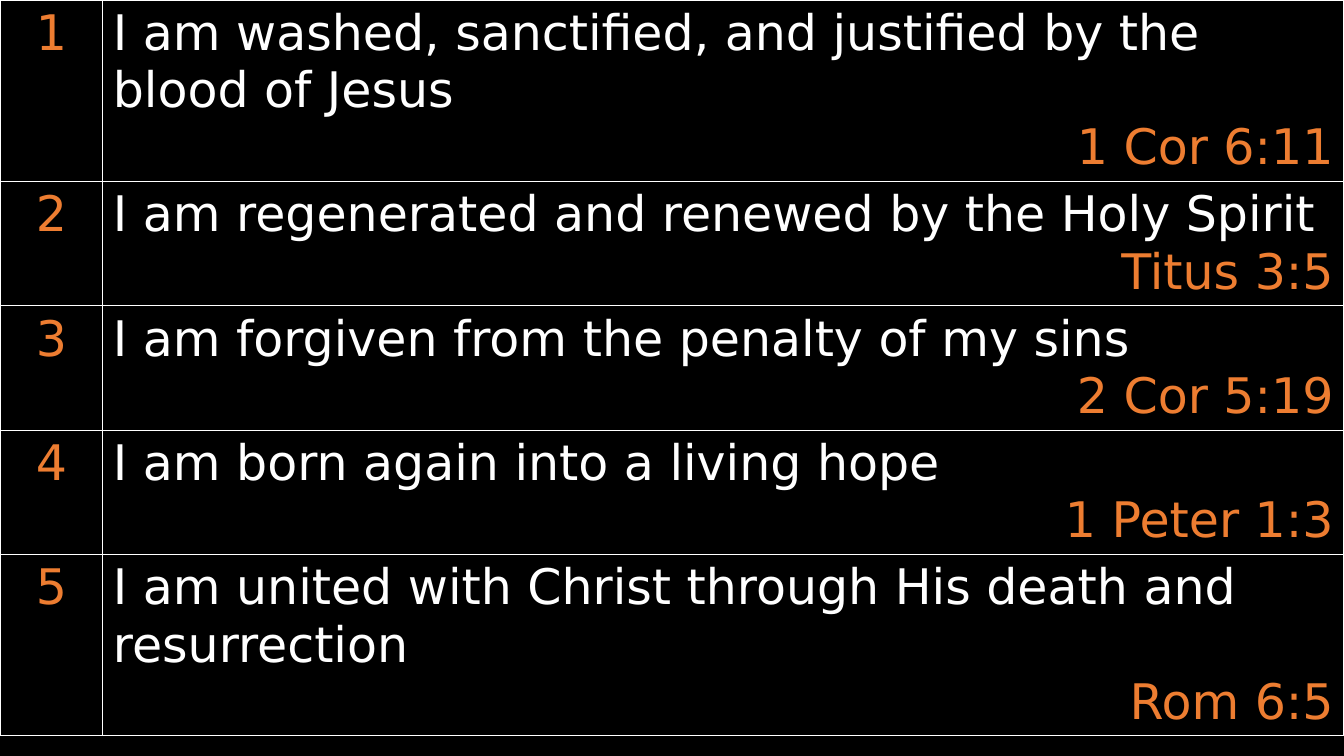
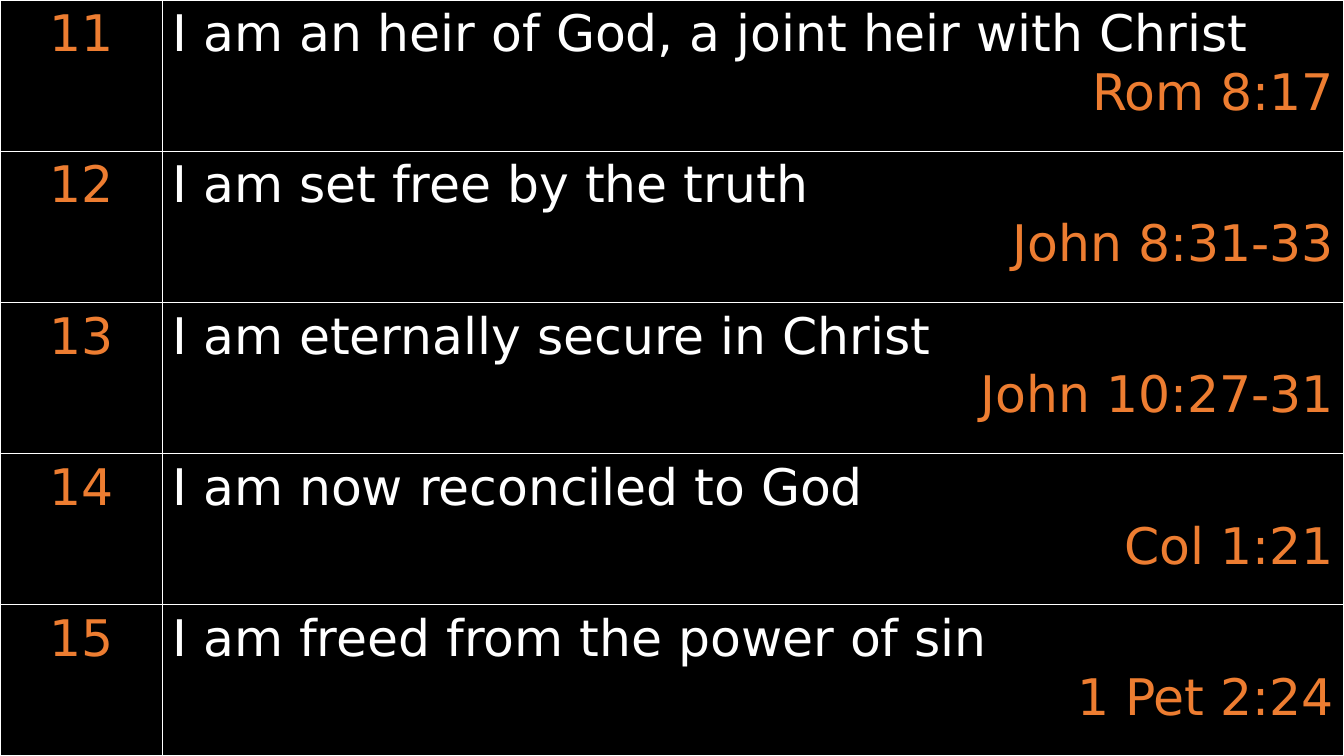
import pptx
import pptx.dml.color
import pptx.enum.text
import pptx.oxml
import pptx.oxml.ns
import pptx.util

ALIGN = pptx.enum.text.PP_ALIGN


def color(value):
    return pptx.dml.color.RGBColor.from_string(value)


class Deck:
    FONT = "DejaVu Sans"
    BACK = "000000"
    TEXT = "FFFFFF"
    ACCENT = "ED7D31"
    BORDER = "FFFFFF"

    def __init__(self):
        self.prs = pptx.Presentation()
        self.prs.slide_width = pptx.util.Inches(13.33)
        self.prs.slide_height = pptx.util.Inches(7.5)
        self.s = None

    def width(self, percent):
        return round(self.prs.slide_width * percent / 100)

    def height(self, percent):
        return round(self.prs.slide_height * percent / 100)

    def slide(self):
        self.s = self.prs.slides.add_slide(self.prs.slide_layouts[6])
        fill = self.s.background.fill
        fill.solid()
        fill.fore_color.rgb = color(self.BACK)

    def run(self, p, text, size, rgb, align):
        p.alignment = align
        r = p.add_run()
        r.text = text
        r.font.name = self.FONT
        r.font.size = pptx.util.Pt(size)
        r.font.color.rgb = color(rgb)

    def style_cell(self, cell):
        cell.fill.solid()
        cell.fill.fore_color.rgb = color(self.BACK)
        tcPr = cell._tc.get_or_add_tcPr()
        for i, side in enumerate("LRTB"):
            tcPr.insert(i, pptx.oxml.parse_xml(
                f'<a:ln{side} {pptx.oxml.ns.nsdecls("a")} w="12700"><a:solidFill>'
                f'<a:srgbClr val="{self.BORDER}"/></a:solidFill></a:ln{side}>'))

    def verse_table(self, first, verses, size, number_width, row_heights):
        self.slide()
        table = self.s.shapes.add_table(
            len(verses), 2, 0, 0, self.width(100), self.height(sum(row_heights))).table
        table.first_row = table.horz_banding = False
        table.columns[0].width = self.width(number_width)
        table.columns[1].width = self.width(100 - number_width)
        for i, (statement, verse) in enumerate(verses):
            table.rows[i].height = self.height(row_heights[i])
            number, body = table.rows[i].cells
            self.style_cell(number)
            self.style_cell(body)
            self.run(number.text_frame.paragraphs[0], str(first + i), size,
                     self.ACCENT, ALIGN.CENTER)
            tf = body.text_frame
            self.run(tf.paragraphs[0], statement, size, self.TEXT, ALIGN.LEFT)
            self.run(tf.add_paragraph(), verse, size, self.ACCENT, ALIGN.RIGHT)


def main():
    deck = Deck()
    deck.verse_table(1, [
        ("I am washed, sanctified, and justified by the blood of Jesus", "1 Cor 6:11"),
        ("I am regenerated and renewed by the Holy Spirit", "Titus 3:5"),
        ("I am forgiven from the penalty of my sins", "2 Cor 5:19"),
        ("I am born again into a living hope", "1 Peter 1:3"),
        ("I am united with Christ through His death and resurrection", "Rom 6:5"),
    ], size=35, number_width=7.65, row_heights=[24, 16.45, 16.45, 16.45, 24])
    deck.verse_table(11, [
        ("I am an heir of God, a joint heir with Christ", "Rom 8:17"),
        ("I am set free by the truth", "John 8:31-33"),
        ("I am eternally secure in Christ", "John 10:27-31"),
        ("I am now reconciled to God", "Col 1:21"),
        ("I am freed from the power of sin", "1 Pet 2:24"),
    ], size=36, number_width=12.08, row_heights=[20] * 5)
    deck.prs.save("out.pptx")


if __name__ == "__main__":
    main()
